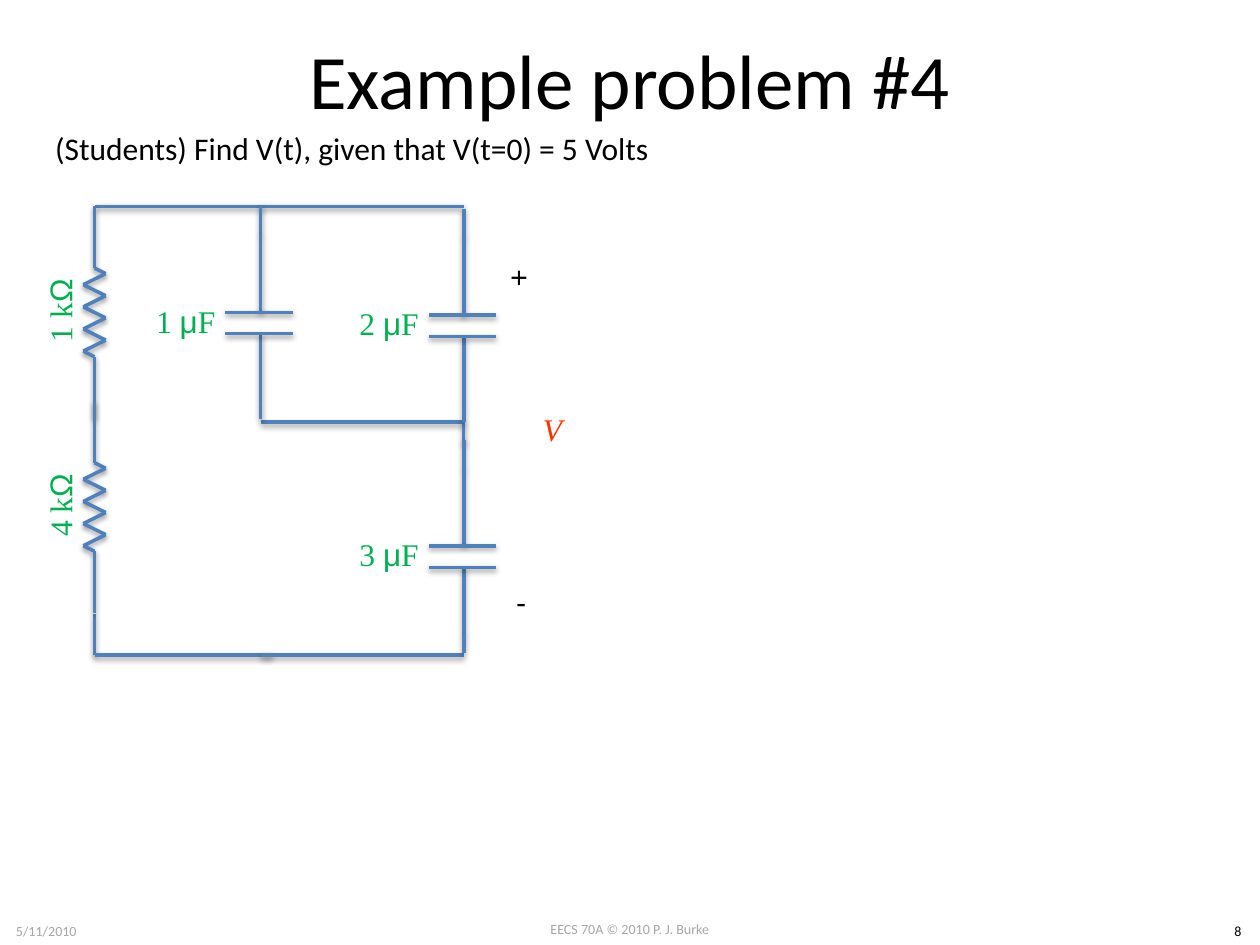
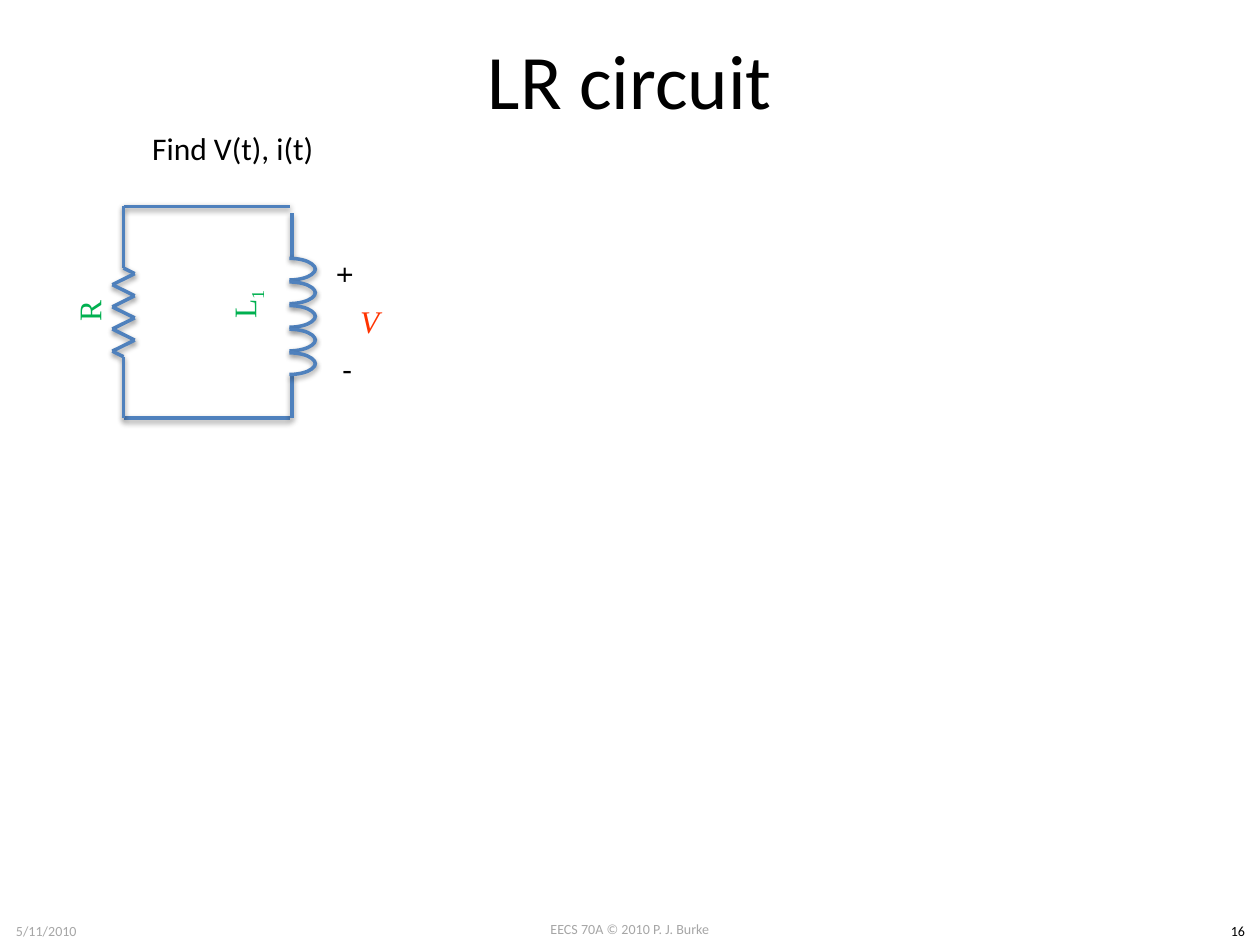
from lxml import etree
from pptx import Presentation
from pptx.dml.color import RGBColor
from pptx.enum.shapes import MSO_CONNECTOR, MSO_SHAPE
from pptx.enum.text import MSO_ANCHOR, PP_ALIGN
from pptx.oxml.ns import qn
from pptx.util import Pt

COLORS = {"text": "000000", "footer": "A6A6A6", "wire": "4F81BD",
          "value": "00B050", "voltage": "FF3300"}
BODY, MATH, SYMBOL = "Calibri", "Times New Roman", "Arial"
LABEL_W, LABEL_H = 85.7, 52.6
ZIGZAG_TOP, ZIGZAG_STEP, ZIGZAG_HALF = 35.2, 6.33, 6.4


def add_text(s, runs, x, y, w, h, size=18, font=BODY, color="text",
             center=True, middle=False, wrap=True, rotation=0):
    sp = s.shapes.add_textbox(Pt(x), Pt(y), Pt(w), Pt(h))
    sp.rotation = rotation
    tf = sp.text_frame
    tf.word_wrap = wrap
    tf.vertical_anchor = MSO_ANCHOR.MIDDLE if middle else MSO_ANCHOR.TOP
    p = tf.paragraphs[0]
    p.alignment = PP_ALIGN.CENTER if center else PP_ALIGN.LEFT
    for text in runs:
        r = p.add_run()
        r.text = text
        r.font.size = Pt(size)
        r.font.name = SYMBOL if text in ("μ", "Ω") else font
        r.font.color.rgb = RGBColor.from_string(COLORS[color])
    return sp


def outline(sp):
    sp.line.color.rgb = RGBColor.from_string(COLORS["wire"])
    sp.line.width = Pt(2)
    effects = etree.SubElement(sp._element.spPr, qn("a:effectLst"))
    shadow = etree.SubElement(effects, qn("a:outerShdw"), blurRad="40000",
                              dist="20000", dir="5400000", rotWithShape="0")
    black = etree.SubElement(shadow, qn("a:srgbClr"), val="000000")
    etree.SubElement(black, qn("a:alpha"), val="38000")


prs = Presentation()
prs.slide_width, prs.slide_height = Pt(720), Pt(540)

circuits = [
    {
        "title": "Example problem #4", "number": "8",
        "task": ("(Students) Find V(t), given that V(t=0) = 5 Volts", 24.5, 360),
        "wires": [(54, 118, 149, 118), (149, 118, 265.3, 118),
                  (149, 241.2, 265.3, 241.2), (265, 253.4, 265, 241.2),
                  (54, 374.4, 54, 350.6), (54, 374.4, 155.5, 374.4),
                  (149, 374.4, 265, 374.4)],
        "resistors": [(54, 118, ("1 k", "Ω")), (54, 229.2, ("4 k", "Ω"))],
        "capacitors": [(149, 118, "1 "), (265.2, 119.6, "2 "), (265.2, 251.5, "3 ")],
        "coils": [],
        "plus": (286, 144.7), "minus": (288, 329.8), "voltage": (288, 223.2),
    },
    {
        "title": "LR circuit", "number": "16",
        "task": ("Find V(t), i(t)", 79.9, 108),
        "wires": [(70.6, 118, 165.6, 118), (70.6, 239, 165.6, 239),
                  (167, 147, 167, 121.7), (167, 239, 167, 213.8)],
        "resistors": [(70.6, 118, ("R",))],
        "capacitors": [],
        "coils": [(150.5, 147, "L", "1")],
        "plus": (186.5, 143.3), "minus": (188.6, 196.6), "voltage": (183.6, 161.3),
    },
]

for circuit in circuits:
    s = prs.slides.add_slide(prs.slide_layouts[6])
    add_text(s, ["EECS 70A © 2010 P. J. Burke"], 276, 522.7, 168, 17, 8, color="footer")
    add_text(s, ["5/11/2010"], 0, 523.4, 53, 17, 8, color="footer")
    add_text(s, [circuit["number"]], 694.8, 523.4, 25.2, 17, 8)
    add_text(s, [circuit["title"]], 36, 0, 648, 90, 44, middle=True)
    task, task_x, task_w = circuit["task"]
    add_text(s, [task], task_x, 70, task_w, 29, center=False, wrap=False)

    wires = list(circuit["wires"])
    for x, top, value in circuit["resistors"]:
        start = top + ZIGZAG_TOP
        points = [(x, top), (x, start)]
        for k in range(8):
            side = 1 if k % 2 == 0 else -1
            points.append((x + side * ZIGZAG_HALF, start + (k + 0.5) * ZIGZAG_STEP))
        points += [(x, start + 8 * ZIGZAG_STEP), (x, top + 121)]
        wires += [a + b for a, b in zip(points, points[1:])]
        add_text(s, value, x - 19.8 - LABEL_W / 2, top + 59.5 - LABEL_H / 2,
                 LABEL_W, LABEL_H, font=MATH, color="value", middle=True, rotation=270)

    for x, top, value in circuit["capacitors"]:
        for a, b in [(0, 16), (16, 60.5), (72.7, 111), (111, 121.5)]:
            wires.append((x, top + a, x, top + b))
        for plate in (60.5, 72.7):
            wires.append((x + 18.3, top + plate, x - 20.2, top + plate))
        add_text(s, (value, "μ", "F"), x - LABEL_W, top + 65.2 - LABEL_H / 2,
                 LABEL_W, LABEL_H, font=MATH, color="value", middle=True)

    for x1, y1, x2, y2 in wires:
        outline(s.shapes.add_connector(MSO_CONNECTOR.STRAIGHT, Pt(x1), Pt(y1), Pt(x2), Pt(y2)))

    for x, top, name, index in circuit["coils"]:
        for turn in range(5):
            for flipped in (False, True):
                y = top + 13.5 * turn + (0 if flipped else 0.6)
                arc = s.shapes.add_shape(MSO_SHAPE.ARC, Pt(x), Pt(y), Pt(29.8), Pt(13))
                arc.fill.background()
                outline(arc)
                if flipped:
                    arc._element.spPr.find(qn("a:xfrm")).set("flipV", "1")
        label = add_text(s, (name, index), x - 52.6, top + 0.6, LABEL_W, LABEL_H,
                         font=MATH, color="value", middle=True, rotation=270)
        subscript = label.text_frame.paragraphs[0].runs[1]
        subscript.font._element.set("baseline", "-25000")

    add_text(s, ["+"], *circuit["plus"], 23.8, 29, center=False, wrap=False, rotation=90)
    add_text(s, ["-"], *circuit["minus"], 20.2, 29, center=False, wrap=False)
    voltage = add_text(s, ["V"], *circuit["voltage"], 55.4, 44, font=MATH,
                       color="voltage", middle=True)
    voltage.text_frame.paragraphs[0].runs[0].font.italic = True

prs.save("out.pptx")
